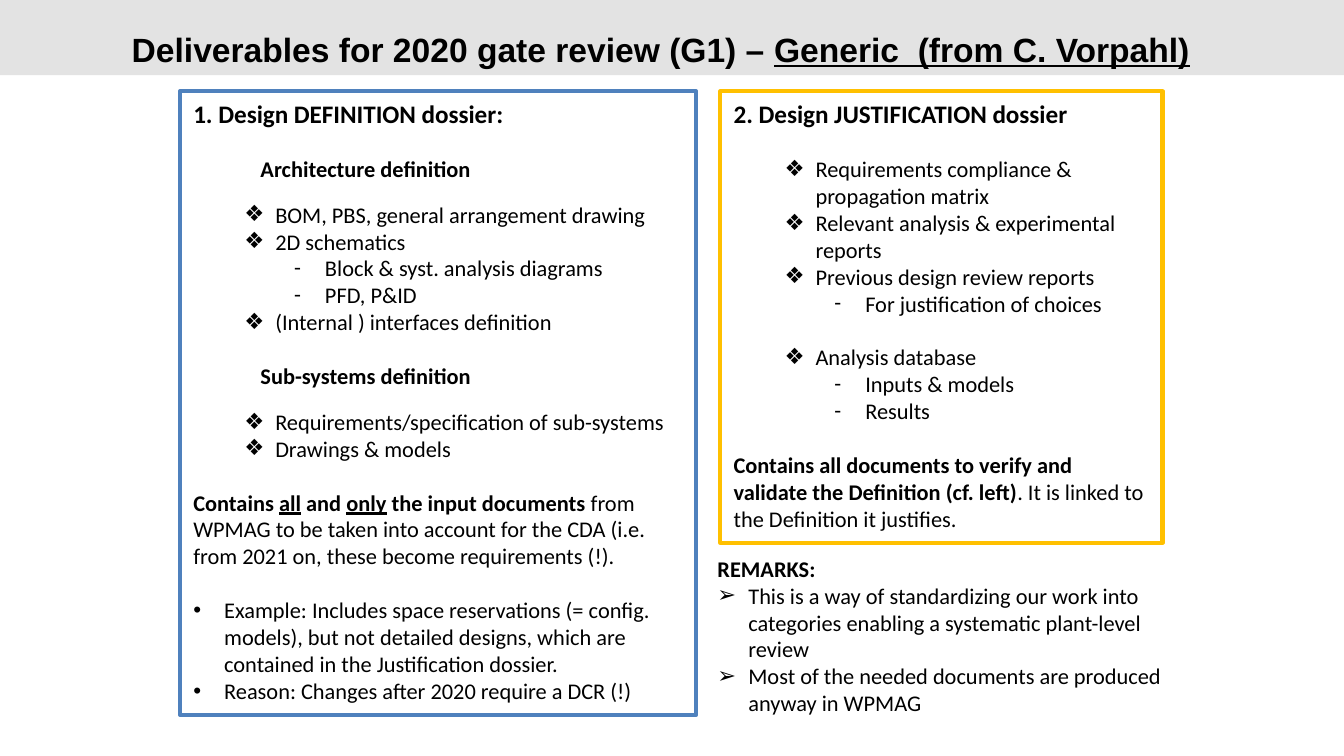
from lxml import etree
from pptx import Presentation
from pptx.dml.color import RGBColor
from pptx.enum.shapes import MSO_SHAPE
from pptx.enum.text import MSO_ANCHOR, MSO_AUTO_SIZE, PP_ALIGN
from pptx.oxml.ns import qn
from pptx.util import Inches, Pt

RECT = MSO_SHAPE.RECTANGLE
TOP, MIDDLE = MSO_ANCHOR.TOP, MSO_ANCHOR.MIDDLE
LEFT = PP_ALIGN.LEFT
NO_FIT = MSO_AUTO_SIZE.NONE

BLACK = RGBColor(0x00, 0x00, 0x00)
GREY = RGBColor(0xE3, 0xE3, 0xE3)
BLUE = RGBColor(0x4F, 0x81, 0xBD)
AMBER = RGBColor(0xFF, 0xC0, 0x00)

LINE = 14.5  # height of one 12 pt line, in points
SMALL = 10   # gap below a subheading, in points

# Paragraph styles: left margin and hanging indent in inches, bullet and its font
PLAIN = dict()
HEADING = dict(size=13.5, bold=True)
SUBHEAD = dict(margin=0.5, bold=True)
DIAMOND = dict(margin=0.61, hang=0.23, bullet="❖", bullet_font="Arial")
DASH = dict(margin=0.98, hang=0.23, bullet="-", bullet_font="Calibri")
DOT = dict(margin=0.23, hang=0.23, bullet="•", bullet_font="Arial")
ARROW = dict(margin=0.23, hang=0.23, bullet="➢", bullet_font="Arial")

# Each entry: style, text or list of (text, format) runs, space before
DEFINITION = [
    (HEADING, "1. Design DEFINITION dossier:", 0),
    (SUBHEAD, "Architecture definition", LINE),
    (DIAMOND, "BOM, PBS, general arrangement drawing", SMALL),
    (DIAMOND, "2D schematics", 0),
    (DASH, "Block & syst. analysis diagrams", 0),
    (DASH, "PFD, P&ID", 0),
    (DIAMOND, "(Internal ) interfaces definition", 0),
    (SUBHEAD, "Sub-systems definition", LINE),
    (DIAMOND, "Requirements/specification of sub-systems", SMALL),
    (DIAMOND, "Drawings & models", 0),
    (PLAIN, [
        ("Contains ", dict(bold=True)),
        ("all", dict(bold=True, underline=True)),
        (" and ", dict(bold=True)),
        ("only", dict(bold=True, underline=True)),
        (" the input documents ", dict(bold=True)),
        ("from WPMAG to be taken into account for the CDA (i.e. from 2021 on, "
         "these become requirements (!).", {}),
    ], LINE),
    (DOT, "Example: Includes space reservations (= config. models), but not "
          "detailed designs, which are contained in the Justification dossier.", LINE),
    (DOT, "Reason: Changes after 2020 require a DCR (!)", 0),
]

JUSTIFICATION = [
    (HEADING, "2. Design JUSTIFICATION dossier", 0),
    (DIAMOND, "Requirements compliance & propagation matrix", LINE),
    (DIAMOND, "Relevant analysis & experimental reports", 0),
    (DIAMOND, "Previous design review reports", 0),
    (DASH, "For justification of choices", 0),
    (DIAMOND, "Analysis database", LINE),
    (DASH, "Inputs & models", 0),
    (DASH, "Results", 0),
    (PLAIN, [
        ("Contains all documents to verify and validate the Definition (cf. left)",
         dict(bold=True)),
        (". It is linked to the Definition it justifies.", {}),
    ], LINE),
]

REMARKS = [
    (PLAIN, [("REMARKS:", dict(bold=True))], 0),
    (ARROW, "This is a way of standardizing our work into categories enabling "
            "a systematic plant-level review", 0),
    (ARROW, "Most of the needed documents are produced anyway in WPMAG", 0),
]


def add_run(p, text, size=12, font="Calibri", bold=False, underline=False):
    r = p.add_run()
    r.text = text
    r.font.size = Pt(size)
    r.font.name = font
    r.font.bold = bold
    r.font.underline = underline
    r.font.color.rgb = BLACK


def set_bullet(p, margin=0, hang=0, bullet=None, bullet_font=None):
    pPr = p._p.get_or_add_pPr()
    pPr.set("marL", str(Inches(margin)))
    pPr.set("indent", str(-Inches(hang)))
    if bullet:
        etree.SubElement(pPr, qn("a:buFont")).set("typeface", bullet_font)
        etree.SubElement(pPr, qn("a:buChar")).set("char", bullet)
    else:
        etree.SubElement(pPr, qn("a:buNone"))


def fill_text(tf, paragraphs):
    tf.word_wrap = True
    tf.vertical_anchor = TOP
    for i, (style, content, gap) in enumerate(paragraphs):
        p = tf.paragraphs[0] if i == 0 else tf.add_paragraph()
        fmt = {k: v for k, v in style.items() if k in ("size", "bold")}
        set_bullet(p, **{k: v for k, v in style.items() if k not in fmt})
        p.alignment = LEFT
        if gap:
            p.space_before = Pt(gap)
        runs = [(content, {})] if isinstance(content, str) else content
        for text, extra in runs:
            add_run(p, text, **{**fmt, **extra})


def add_header(slide, x, y, w, h):
    # Grey band, placed behind the title
    band = slide.shapes.add_shape(RECT, Inches(x), Inches(y), Inches(w), Inches(h))
    band.shadow.inherit = False
    band.fill.solid()
    band.fill.fore_color.rgb = GREY
    band.line.fill.background()
    slide.shapes._spTree.insert(2, band._element)

    # Title
    title = slide.shapes.title
    title.left, title.top = Inches(x + 0.91), Inches(y + 0.1)
    title.width, title.height = Inches(8.11), Inches(0.38)
    tf = title.text_frame
    tf.auto_size = NO_FIT
    tf.word_wrap = True
    tf.vertical_anchor = MIDDLE
    tf.margin_left = tf.margin_right = Inches(0.07)
    tf.margin_top = tf.margin_bottom = Inches(0.04)
    p = tf.paragraphs[0]
    p.alignment = LEFT
    p.line_spacing = Pt(32)
    fmt = dict(size=18, font="Arial", bold=True)
    add_run(p, "Deliverables for 2020 gate review (G1) – ", **fmt)
    add_run(p, "Generic  (from C. Vorpahl)", underline=True, **fmt)


def add_dossier(slide, x, y, w, h, color, paragraphs):
    sp = slide.shapes.add_shape(RECT, Inches(x), Inches(y), Inches(w), Inches(h))
    sp.shadow.inherit = False
    sp.fill.background()
    sp.line.color.rgb = color
    sp.line.width = Pt(2.25)
    fill_text(sp.text_frame, paragraphs)


def add_remarks(slide, x, y, w, h):
    box = slide.shapes.add_textbox(Inches(x), Inches(y), Inches(w), Inches(h))
    fill_text(box.text_frame, REMARKS)


def main():
    prs = Presentation()
    prs.slide_width = Inches(10)
    prs.slide_height = prs.slide_width * 9 // 16
    slide = prs.slides.add_slide(prs.slide_layouts[5])
    add_header(slide, 0, 0, 10, 0.56)
    add_dossier(slide, 1.34, 0.68, 3.84, 4.64, BLUE, DEFINITION)
    add_dossier(slide, 5.36, 0.68, 3.29, 3.36, AMBER, JUSTIFICATION)
    add_remarks(slide, 5.24, 4.08, 3.6, 1.72)
    prs.save("out.pptx")


if __name__ == "__main__":
    main()
